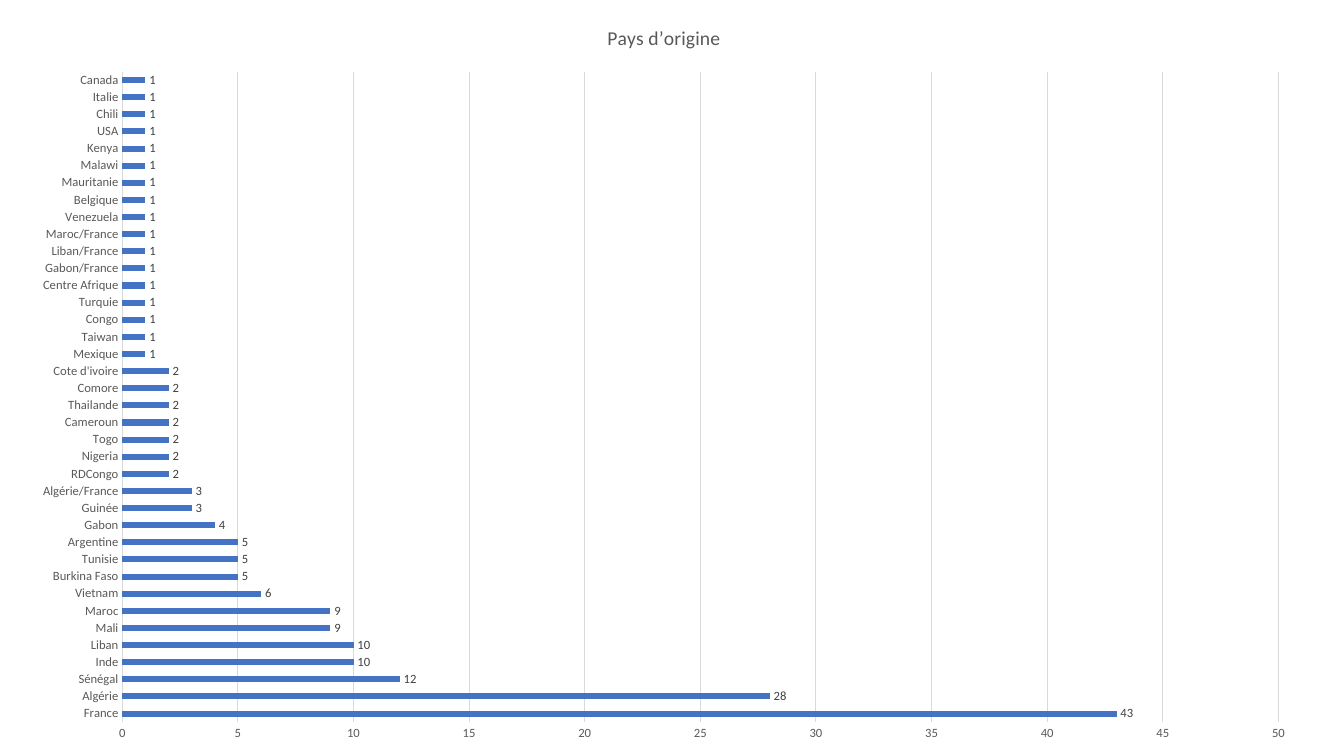
from dataclasses import dataclass

from pptx import Presentation
from pptx.chart.data import CategoryChartData
from pptx.dml.color import RGBColor
from pptx.enum.chart import XL_CHART_TYPE, XL_LABEL_POSITION, XL_TICK_MARK
from pptx.util import Inches, Pt

BAR_CLUSTERED = XL_CHART_TYPE.BAR_CLUSTERED
OUTSIDE_END = XL_LABEL_POSITION.OUTSIDE_END
NO_TICK = XL_TICK_MARK.NONE


@dataclass(frozen=True)
class Theme:
    font: str = "Calibri"
    bar: str = "4472C4"
    text: str = "595959"
    label: str = "404040"
    line: str = "D9D9D9"
    title_size: float = 14
    chart_size: float = 10
    small_size: float = 9
    line_width: float = 0.75


THEME = Theme()
TITLE = "Pays d’origine"
AXIS_MAX, AXIS_STEP = 50, 5

# Countries grouped by number of people, from the bottom bar upwards
COUNTRIES_BY_COUNT = {
    43: ["France"],
    28: ["Algérie"],
    12: ["Sénégal"],
    10: ["Inde", "Liban"],
    9: ["Mali", "Maroc"],
    6: ["Vietnam"],
    5: ["Burkina Faso", "Tunisie", "Argentine"],
    4: ["Gabon"],
    3: ["Guinée", "Algérie/France"],
    2: ["RDCongo", "Nigeria", "Togo", "Cameroun", "Thailande", "Comore",
        "Cote d'ivoire"],
    1: ["Mexique", "Taiwan", "Congo", "Turquie", "Centre Afrique",
        "Gabon/France", "Liban/France", "Maroc/France", "Venezuela",
        "Belgique", "Mauritanie", "Malawi", "Kenya", "USA", "Chili",
        "Italie", "Canada"],
}


def style_font(font, size, color):
    font.name = THEME.font
    font.size = Pt(size)
    font.bold = False
    font.color.rgb = RGBColor.from_string(color)


def style_line(line):
    line.color.rgb = RGBColor.from_string(THEME.line)
    line.width = Pt(THEME.line_width)


def style_axis(axis):
    axis.major_tick_mark = axis.minor_tick_mark = NO_TICK
    style_font(axis.tick_labels.font, THEME.small_size, THEME.text)


def add_title(chart, text):
    chart.has_title = True
    chart.chart_title.include_in_layout = False
    r = chart.chart_title.text_frame.paragraphs[0].add_run()
    r.text = text
    style_font(r.font, THEME.title_size, THEME.text)


def style_bars(plot):
    plot.gap_width = 182
    plot.vary_by_categories = False
    series = plot.series[0]
    series.format.fill.solid()
    series.format.fill.fore_color.rgb = RGBColor.from_string(THEME.bar)
    labels = series.data_labels
    labels.show_value = True
    labels.position = OUTSIDE_END
    style_font(labels.font, THEME.small_size, THEME.label)


def add_country_chart(s, left, top, width, height):
    data = CategoryChartData()
    pairs = [(country, count) for count, countries in COUNTRIES_BY_COUNT.items()
             for country in countries]
    data.categories = [country for country, _ in pairs]
    data.add_series("Series 1", [count for _, count in pairs])
    chart = s.shapes.add_chart(BAR_CLUSTERED, left, top, width, height, data).chart
    chart.has_legend = False
    style_font(chart.font, THEME.chart_size, "000000")
    add_title(chart, TITLE)
    style_bars(chart.plots[0])

    style_axis(chart.category_axis)
    style_line(chart.category_axis.format.line)

    counts = chart.value_axis
    style_axis(counts)
    counts.minimum_scale, counts.maximum_scale = 0, AXIS_MAX
    counts.major_unit = AXIS_STEP
    counts.format.line.fill.background()
    counts.has_major_gridlines = True
    style_line(counts.major_gridlines.format.line)


def main():
    prs = Presentation()
    prs.slide_width, prs.slide_height = Inches(13.33), Inches(7.5)
    s = prs.slides.add_slide(prs.slide_layouts[6])
    margin = Inches(0.17)
    add_country_chart(s, margin, 0, Inches(12.83), prs.slide_height)
    prs.save("out.pptx")


if __name__ == "__main__":
    main()
